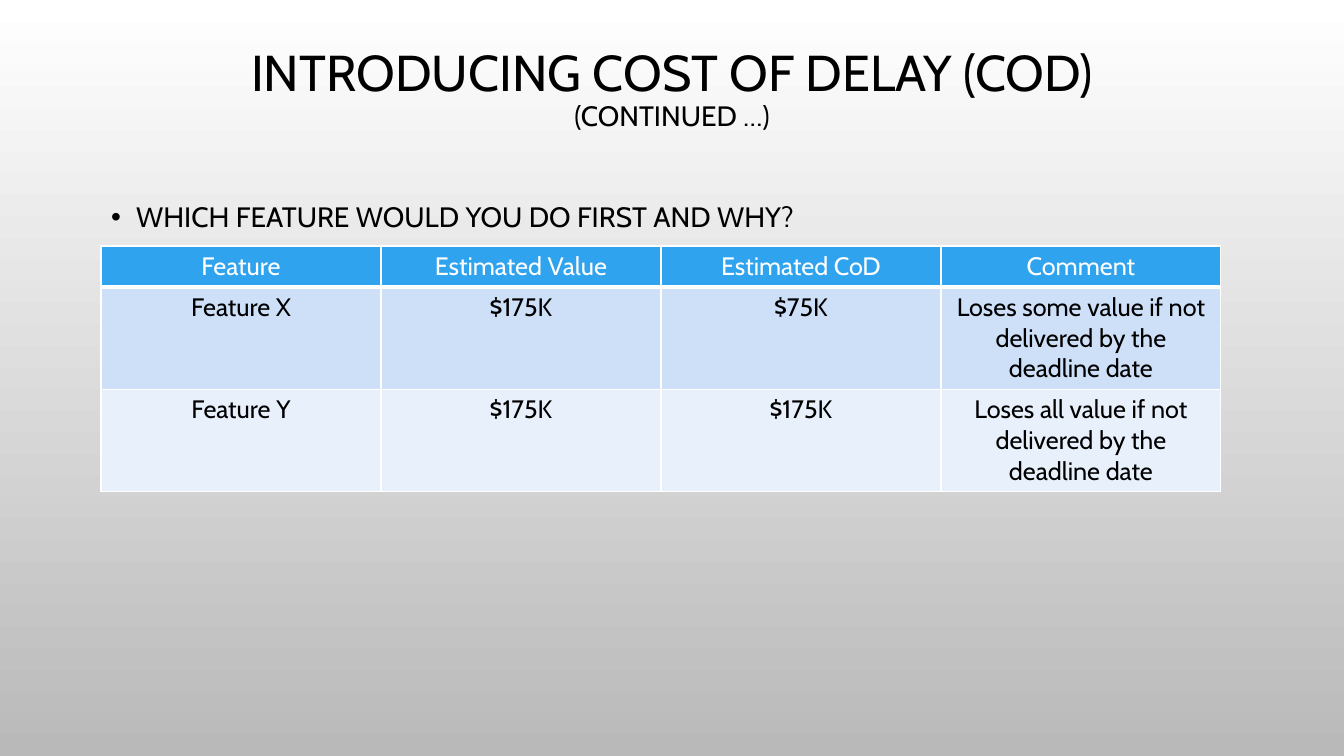
"""Builds the Cost of Delay slide with its feature comparison table."""
from lxml.etree import SubElement
from pptx import Presentation
from pptx.dml.color import RGBColor
from pptx.enum.text import MSO_ANCHOR as Anchor, MSO_AUTO_SIZE as AutoSize, PP_ALIGN as Align
from pptx.oxml.ns import qn
from pptx.util import Emu, Pt

BLACK = RGBColor(0x00, 0x00, 0x00)
WHITE = RGBColor(0xFF, 0xFF, 0xFF)
GREY = RGBColor(0xB9, 0xB9, 0xB9)
BLUE = RGBColor(0x2F, 0xA3, 0xEE)
LIGHT_BLUE = RGBColor(0xCD, 0xE0, 0xF8)
PALE_BLUE = RGBColor(0xE8, 0xF0, 0xFC)
FONT = "Cabin"


def px(length):
    return Emu(round(length * 914400 / 100.8))


def style(paragraph, size, color):
    paragraph.font.name = FONT
    paragraph.font.size = Pt(size)
    paragraph.font.color.rgb = color


deck = Presentation()
deck.slide_width, deck.slide_height = px(1344), px(756)
slide = deck.slides.add_slide(deck.slide_layouts[1])

backdrop = slide.background.fill
backdrop.gradient()
backdrop.gradient_angle = 270
for stop, color in zip(backdrop.gradient_stops, (WHITE, GREY)):
    stop.color.rgb = color

heading, question = slide.placeholders
for holder, top, height, anchor in ((heading, 2, 176, Anchor.MIDDLE), (question, 188, 450, Anchor.TOP)):
    holder.left, holder.top = px(101), px(top)
    holder.width, holder.height = px(1142), px(height)
    holder.text_frame.auto_size = AutoSize.NONE
    holder.text_frame.vertical_anchor = anchor

title_line = heading.text_frame.paragraphs[0]
title_line.alignment = Align.CENTER
title_line.line_spacing = 0.9
style(title_line, 36, BLACK)
title_line.add_run().text = "INTRODUCING COST OF DELAY (COD)"
title_line.add_line_break()
continued = title_line.add_run()
continued.text = "(CONTINUED …)"
continued.font.size = Pt(20)

question_line = question.text_frame.paragraphs[0]
question_line.text = "WHICH FEATURE WOULD YOU DO FIRST AND WHY?"
question_line.line_spacing = 1.2
question_line.space_before = Pt(0)
bullet_format = question_line._p.get_or_add_pPr()
bullet_format.set("marL", str(px(25)))
bullet_format.set("indent", str(-px(25)))
bullet_color = SubElement(bullet_format, qn("a:buClr"))
SubElement(bullet_color, qn("a:srgbClr")).set("val", str(BLACK))
SubElement(bullet_format, qn("a:buFont")).set("typeface", "Arial")
SubElement(bullet_format, qn("a:buChar")).set("char", "•")
style(question_line, 20, BLACK)

features = (
    (41, BLUE, WHITE, ("Feature", "Estimated Value", "Estimated CoD", "Comment")),
    (102, LIGHT_BLUE, BLACK,
     ("Feature X", "$175K", "$75K", "Loses some value if not delivered by the deadline date")),
    (102, PALE_BLUE, BLACK,
     ("Feature Y", "$175K", "$175K", "Loses all value if not delivered by the deadline date")),
)
table = slide.shapes.add_table(3, 4, px(101), px(246), px(1120), px(245)).table
for column in table.columns:
    column.width = px(280)
for row_index, (height, fill, ink, texts) in enumerate(features):
    table.rows[row_index].height = px(height)
    for cell, text in zip(table.rows[row_index].cells, texts):
        cell.text = text
        cell_line = cell.text_frame.paragraphs[0]
        cell_line.alignment = Align.CENTER
        style(cell_line, 18, ink)
        cell_format = cell._tc.get_or_add_tcPr()
        for side in ("lnL", "lnR", "lnT", "lnB"):
            thick = (row_index, side) in ((0, "lnB"), (1, "lnT"))
            border = SubElement(cell_format, qn(f"a:{side}"))
            border.set("w", str(Pt(3 if thick else 1)))
            border_fill = SubElement(border, qn("a:solidFill"))
            SubElement(border_fill, qn("a:srgbClr")).set("val", str(WHITE))
        cell.fill.solid()
        cell.fill.fore_color.rgb = fill

deck.save("out.pptx")
